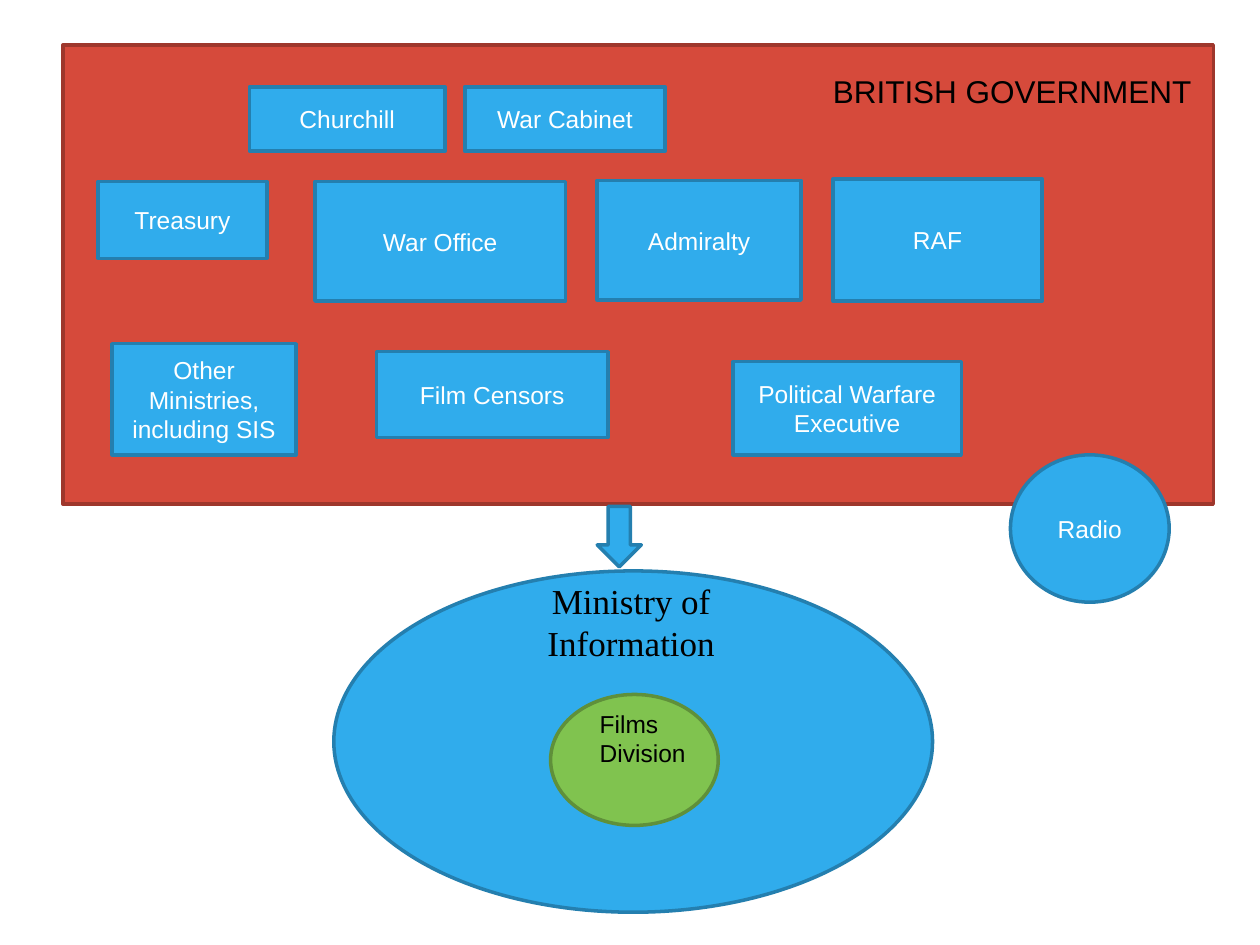
from pptx import Presentation
from pptx.dml.color import RGBColor
from pptx.enum.shapes import MSO_SHAPE
from pptx.enum.text import MSO_ANCHOR, MSO_AUTO_SIZE, PP_ALIGN
from pptx.util import Cm, Pt

RECTANGLE, OVAL, DOWN_ARROW = MSO_SHAPE.RECTANGLE, MSO_SHAPE.OVAL, MSO_SHAPE.DOWN_ARROW
LEFT, CENTER = PP_ALIGN.LEFT, PP_ALIGN.CENTER
MIDDLE = MSO_ANCHOR.MIDDLE
GROW = MSO_AUTO_SIZE.SHAPE_TO_FIT_TEXT

BLUE = ("30ACEC", "247FAF")
GREEN = ("80C34F", "5F903A")
RED = ("D64A3B", "9E372C")

deck = Presentation()
deck.slide_width, deck.slide_height = Cm(25.4), Cm(19.05)
page = deck.slides.add_slide(deck.slide_layouts[6])


def write(box, text, size, color, font="Arial", align=CENTER):
    frame = box.text_frame
    frame.word_wrap = True
    frame.text = text
    for para in frame.paragraphs:
        para.alignment = align
        para.font.name = font
        para.font.size = Pt(size)
        para.font.color.rgb = RGBColor.from_string(color)


def draw(kind, place, colors, text=""):
    shape = page.shapes.add_shape(kind, *map(Cm, place))
    shape.shadow.inherit = False
    fill, line = colors
    shape.fill.solid()
    shape.fill.fore_color.rgb = RGBColor.from_string(fill)
    shape.line.color.rgb = RGBColor.from_string(line)
    shape.line.width = Pt(2)
    if text:
        shape.text_frame.vertical_anchor = MIDDLE
        write(shape, text, 14, "FFFFFF")


draw(OVAL, (6.73, 11.51, 12.07, 6.88), BLUE)
draw(OVAL, (11.1, 14, 3.38, 2.64), GREEN)
draw(RECTANGLE, (1.27, 0.91, 23.19, 9.25), RED)

departments = [
    ("Churchill", 5.03, 1.75, 3.94, 1.3),
    ("War Cabinet", 9.37, 1.75, 4.04, 1.3),
    ("Treasury", 1.98, 3.66, 3.4, 1.55),
    ("War Office", 6.35, 3.66, 5.05, 2.41),
    ("Admiralty", 12.04, 3.64, 4.11, 2.41),
    ("RAF", 16.79, 3.61, 4.22, 2.46),
    ("Other Ministries, including SIS", 2.26, 6.93, 3.71, 2.24),
    ("Film Censors", 7.59, 7.09, 4.67, 1.73),
    ("Political Warfare Executive", 14.78, 7.29, 4.6, 1.88),
]
for name, *place in departments:
    draw(RECTANGLE, place, BLUE, name)

draw(OVAL, (20.37, 9.17, 3.2, 2.97), BLUE, "Radio")
draw(DOWN_ARROW, (12.04, 10.21, 0.89, 1.22), BLUE)

labels = [
    ("Ministry of Information", (10.67, 11.56, 4.11, 1.96), 20, "Times New Roman", CENTER),
    ("Films\nDivision", (11.84, 14.17, 2.24, 1.45), 14, "Arial", LEFT),
    ("BRITISH GOVERNMENT", (16.54, 1.32, 7.92, 1.02), 18, "Arial", LEFT),
]
for text, place, size, font, align in labels:
    box = page.shapes.add_textbox(*map(Cm, place))
    write(box, text, size, "000000", font, align)
    box.text_frame.auto_size = GROW

deck.save("out.pptx")
